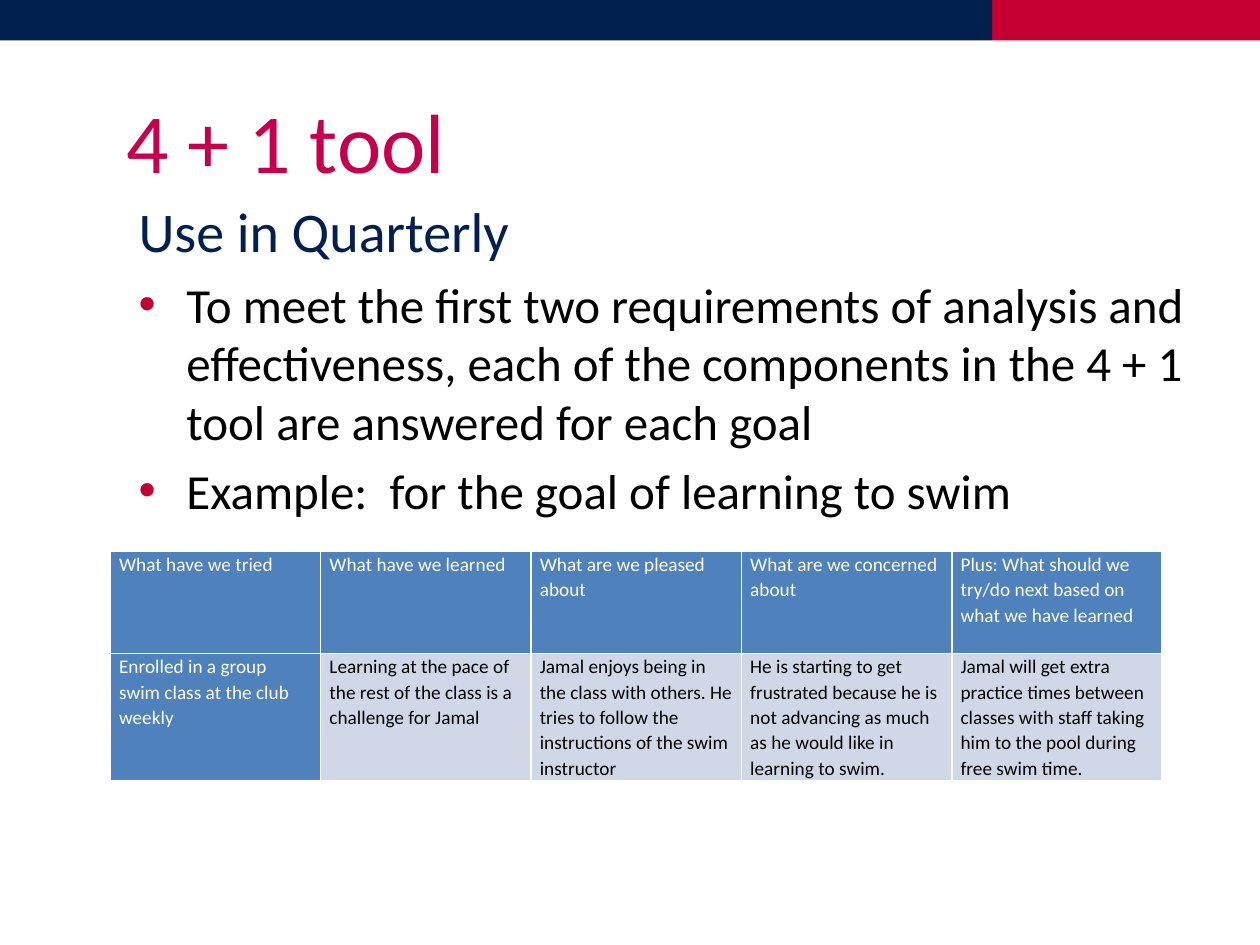
from dataclasses import dataclass

from lxml import etree
from pptx import Presentation
from pptx.dml.color import RGBColor
from pptx.enum.shapes import MSO_SHAPE
from pptx.enum.text import MSO_ANCHOR, MSO_AUTO_SIZE, PP_ALIGN
from pptx.oxml.ns import qn
from pptx.util import Inches, Pt

RECT = MSO_SHAPE.RECTANGLE
TOP = MSO_ANCHOR.TOP
LEFT = PP_ALIGN.LEFT
NO_FIT = MSO_AUTO_SIZE.NONE
UNIT = 0.125


@dataclass(frozen=True)
class Theme:
    font: str = "Calibri"
    navy: str = "011F4F"
    red: str = "C40033"
    rose: str = "C4004F"
    blue: str = "4F81BD"
    pale: str = "D0D8E8"
    white: str = "FFFFFF"
    black: str = "000000"
    title: int = 48
    subtitle: int = 32
    body: int = 28
    cell: int = 11


@dataclass(frozen=True)
class Box:
    col: float
    row: float
    cols: float
    rows: float

    def emu(self) -> list[int]:
        return [Inches(v * UNIT) for v in (self.col, self.row, self.cols, self.rows)]


@dataclass(frozen=True)
class Band:
    box: Box
    color: str


THEME = Theme()
BANDS = [
    Band(Box(63, 0, 17, 2.56), THEME.red),
    Band(Box(0, 0, 63, 2.56), THEME.navy),
]
TITLE = Box(8, 6.64, 64, 10)
SUBTITLE = Box(8.8, 12.5, 63.2, 4)
BODY = Box(8, 17, 68, 33.4)
TABLE = Box(7, 35, 66.8, 14.45)
ROW_SHARES = [0.45, 0.55]
BULLETS = [
    "To meet the first two requirements of analysis and effectiveness, "
    "each of the components in the 4 + 1 tool are answered for each goal",
    "Example:  for the goal of learning to swim",
]
CELLS = [
    [
        "What have we tried",
        "What have we learned",
        "What are we pleased about",
        "What are we concerned about",
        "Plus: What should we try/do next based on what we have learned",
    ],
    [
        "Enrolled in a group swim class at the club weekly",
        "Learning at the pace of the rest of the class is a challenge for Jamal",
        "Jamal enjoys being in the class with others. He tries to follow the "
        "instructions of the swim instructor",
        "He is starting to get frustrated because he is not advancing as much "
        "as he would like in learning to swim.",
        "Jamal will get extra practice times between classes with staff taking "
        "him to the pool during free swim time.",
    ],
]


def rgb(color: str) -> RGBColor:
    return RGBColor.from_string(color)


def style(p, size: int, color: str) -> None:
    p.alignment = LEFT
    for r in p.runs:
        r.font.name = THEME.font
        r.font.size = Pt(size)
        r.font.bold = False
        r.font.color.rgb = rgb(color)


def place(sp, box: Box, inset: float) -> None:
    sp.left, sp.top, sp.width, sp.height = box.emu()
    tf = sp.text_frame
    tf.word_wrap = True
    tf.auto_size = NO_FIT
    tf.vertical_anchor = TOP
    tf.margin_left = tf.margin_right = Inches(inset)
    tf.margin_top = tf.margin_bottom = Inches(inset / 2)


def draw_band(slide, band: Band) -> None:
    sp = slide.shapes.add_shape(RECT, *band.box.emu())
    sp.shadow.inherit = False
    sp.fill.solid()
    sp.fill.fore_color.rgb = rgb(band.color)
    sp.line.fill.background()


def draw_heading(sp, box: Box, text: str, size: int, color: str) -> None:
    place(sp, box, 0)
    sp.text_frame.text = text
    style(sp.text_frame.paragraphs[0], size, color)


def add_bullet(p, color: str) -> None:
    pPr = p._p.get_or_add_pPr()
    pPr.set("marL", str(Inches(0.38)))
    pPr.set("indent", str(-Inches(0.38)))
    clr = etree.SubElement(pPr, qn("a:buClr"))
    etree.SubElement(clr, qn("a:srgbClr"), val=color)
    etree.SubElement(pPr, qn("a:buFont"), typeface="Arial")
    etree.SubElement(pPr, qn("a:buChar"), char="•")


def draw_bullets(sp, box: Box, items: list[str]) -> None:
    place(sp, box, 0.1)
    tf = sp.text_frame
    tf.text = "\n".join(items)
    for i, p in enumerate(tf.paragraphs):
        add_bullet(p, THEME.red)
        p.space_before = Pt(0.2 * THEME.body if i else 0)
        style(p, THEME.body, THEME.black)


def add_borders(cell, color: str, width: float) -> None:
    tcPr = cell._tc.get_or_add_tcPr()
    for side in ("lnL", "lnR", "lnT", "lnB"):
        ln = etree.SubElement(tcPr, qn(f"a:{side}"), w=str(Pt(width)))
        fill = etree.SubElement(ln, qn("a:solidFill"))
        etree.SubElement(fill, qn("a:srgbClr"), val=color)


def draw_cell(cell, text: str, accent: bool) -> None:
    cell.margin_left = cell.margin_right = Inches(0.07)
    cell.margin_top = cell.margin_bottom = 0
    cell.vertical_anchor = TOP
    add_borders(cell, THEME.white, 1)
    cell.fill.solid()
    cell.fill.fore_color.rgb = rgb(THEME.blue if accent else THEME.pale)
    cell.text_frame.text = text
    p = cell.text_frame.paragraphs[0]
    p.line_spacing = 1.07
    style(p, THEME.cell, THEME.white if accent else THEME.black)


def draw_table(slide, box: Box, rows: list[list[str]]) -> None:
    tbl = slide.shapes.add_table(len(rows), len(rows[0]), *box.emu()).table
    tbl.horz_banding = False
    for row, share in zip(tbl.rows, ROW_SHARES):
        row.height = Inches(box.rows * share * UNIT)
    for i, texts in enumerate(rows):
        for j, text in enumerate(texts):
            draw_cell(tbl.cell(i, j), text, accent=i == 0 or j == 0)


def main() -> None:
    prs = Presentation()
    prs.slide_width, prs.slide_height = Inches(10), Inches(7.5)
    slide = prs.slides.add_slide(prs.slide_layouts[1])
    for band in BANDS:
        draw_band(slide, band)
    title = slide.shapes.title
    draw_heading(title, TITLE, "4 + 1 tool", THEME.title, THEME.rose)
    title.text_frame.paragraphs[0].line_spacing = Pt(49)
    subtitle = slide.shapes.add_textbox(*SUBTITLE.emu())
    draw_heading(subtitle, SUBTITLE, "Use in Quarterly", THEME.subtitle, THEME.navy)
    draw_bullets(slide.placeholders[1], BODY, BULLETS)
    draw_table(slide, TABLE, CELLS)
    prs.save("out.pptx")


if __name__ == "__main__":
    main()
